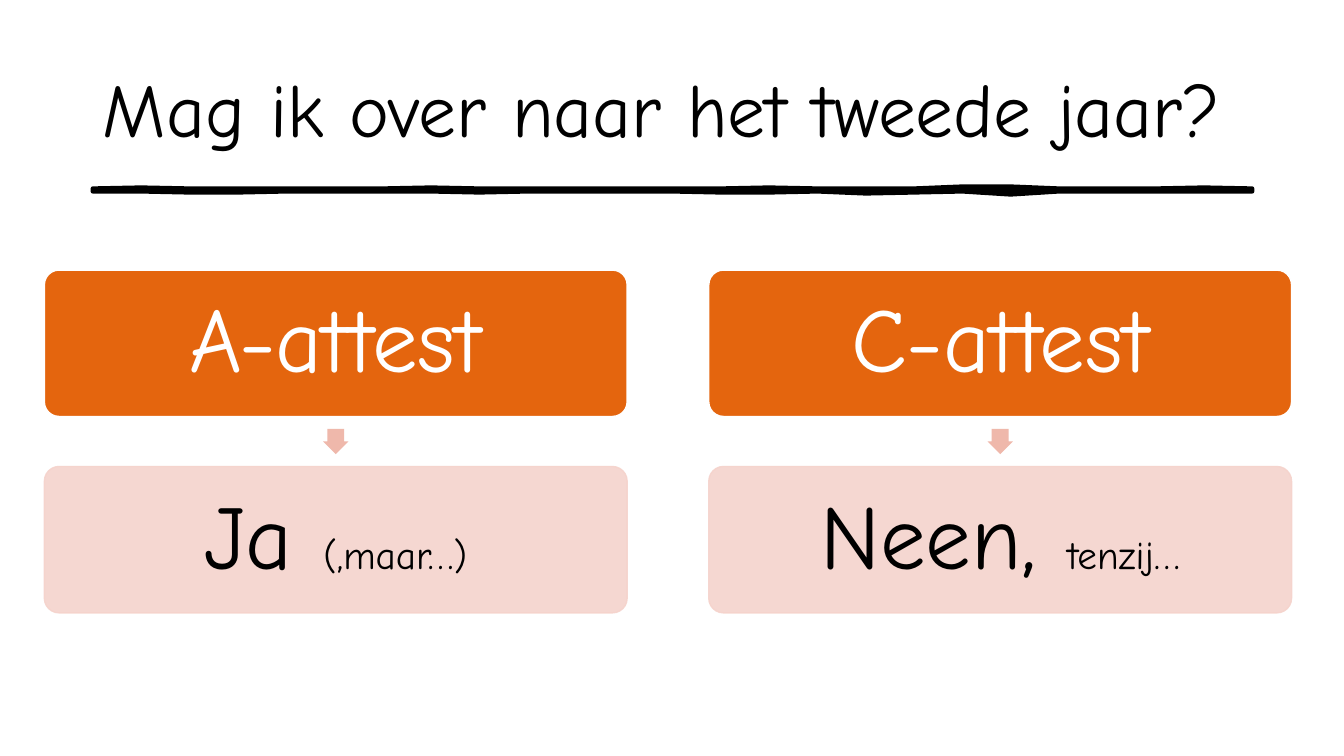
from lxml.etree import SubElement
from pptx import Presentation
from pptx.dml.color import RGBColor
from pptx.enum.shapes import MSO_SHAPE as Shape
from pptx.enum.text import MSO_ANCHOR as Anchor, MSO_AUTO_SIZE as AutoSize, PP_ALIGN as Align
from pptx.oxml.ns import qn
from pptx.util import Inches, Pt

BLACK = RGBColor(0x00, 0x00, 0x00)
WHITE = RGBColor(0xFF, 0xFF, 0xFF)
ORANGE = RGBColor(0xE4, 0x65, 0x0E)
PINK = RGBColor(0xF5, 0xD3, 0xCC)
SALMON = RGBColor(0xEF, 0xB8, 0xAB)
FONT = "Comic Neue"

WIDTH, HEIGHT = Inches(13.33), Inches(7.5)
COLUMN_LEFT, COLUMN_PITCH, COLUMN_TOP = Inches(0.44), Inches(6.59), Inches(2.68)
COLUMN_WIDTH, COLUMN_HEIGHT = Inches(5.78), Inches(3.4)
CARD_SHARE = 0.427
ARROW = Inches(0.25)
STROKE_TOP = [0, -1, 0, 0, 0, 0, 0, -1, 0, 0, 0, 0, 0, 0, -1, 0, 0, 0, -2, -2, 0, 0, 0, -1, 0]
STROKE_BOTTOM = [0, 0, 1, 1, 0, 0, 0, 0, 1, 0, 0, 0, 0, 1, 1, 0, 2, 1, 0, 3, 0, 0, 0, 0, 0]

COLUMNS = [
    ("A-attest", [("Ja ", 65), ("(,maar…)", 28)]),
    ("C-attest", [("Neen, ", 65), ("tenzij…", 28)]),
]


def set_all(target, values):
    for name, value in values.items():
        setattr(target, name, value)


def write(tf, runs, color, align, spacing):
    set_all(tf, dict(word_wrap=True, auto_size=AutoSize.NONE, vertical_anchor=Anchor.MIDDLE))
    p = tf.paragraphs[0]
    set_all(p, dict(alignment=align, line_spacing=spacing))
    for text, size in runs:
        r = p.add_run()
        r.text = text
        set_all(r.font, dict(name=FONT, size=Pt(size)))
        r.font.color.rgb = color


def add_title(s, left, top, width, height):
    title = s.shapes.title
    set_all(title, dict(left=left, top=top, width=width, height=height))
    write(title.text_frame, [("Mag ik over naar het tweede jaar?", 54)], BLACK, Align.LEFT, 0.9)


def add_brush_stroke(s, left, top, width, height):
    step = width / (len(STROKE_TOP) - 1)
    wave = Inches(0.01)
    upper = [(left + i * step, top + y * wave) for i, y in enumerate(STROKE_TOP)]
    lower = [(left + i * step, top + height + y * wave) for i, y in enumerate(STROKE_BOTTOM)]
    builder = s.shapes.build_freeform(*upper[0])
    builder.add_line_segments(upper[1:] + lower[::-1], close=True)
    sp = builder.convert_to_shape()
    paint(sp, BLACK, BLACK, 3)


def paint(sp, fill, line=None, line_width=1, alpha=None):
    sp.shadow.inherit = False
    sp.fill.solid()
    sp.fill.fore_color.rgb = fill
    if line is None:
        sp.line.fill.background()
    else:
        sp.line.color.rgb = line
        sp.line.width = Pt(line_width)
    if alpha is not None:
        for color in sp._element.spPr.iter(qn("a:srgbClr")):
            SubElement(color, qn("a:alpha"), val=str(alpha * 1000))


def add_card(s, left, top, width, height, runs, color, **look):
    sp = s.shapes.add_shape(Shape.ROUNDED_RECTANGLE, left, top, width, height)
    sp.adjustments[0] = 0.1
    paint(sp, **look)
    write(sp.text_frame, runs, color, Align.CENTER, 0.9)


def add_column(s, left, top, width, height, heading, answer):
    card = int(height * CARD_SHARE)
    add_card(s, left, top, width, card, [(heading, 65)], WHITE, fill=ORANGE, line=WHITE)
    arrow = s.shapes.add_shape(Shape.DOWN_ARROW, left + (width - ARROW) // 2,
                               top + (height - ARROW) // 2, ARROW, ARROW)
    arrow.adjustments[0] = 0.667
    paint(arrow, SALMON)
    add_card(s, left, top + height - card, width, card, answer, BLACK,
             fill=PINK, line=PINK, alpha=90)


def main():
    prs = Presentation()
    set_all(prs, dict(slide_width=WIDTH, slide_height=HEIGHT))
    s = prs.slides.add_slide(prs.slide_layouts[5])
    margin, content = Inches(0.92), Inches(11.5)
    add_brush_stroke(s, margin, Inches(1.87), content, Inches(0.03))
    add_title(s, margin, Inches(0.4), content, Inches(1.45))
    for i, (heading, answer) in enumerate(COLUMNS):
        add_column(s, COLUMN_LEFT + i * COLUMN_PITCH, COLUMN_TOP,
                   COLUMN_WIDTH, COLUMN_HEIGHT, heading, answer)
    prs.save("out.pptx")


if __name__ == "__main__":
    main()
